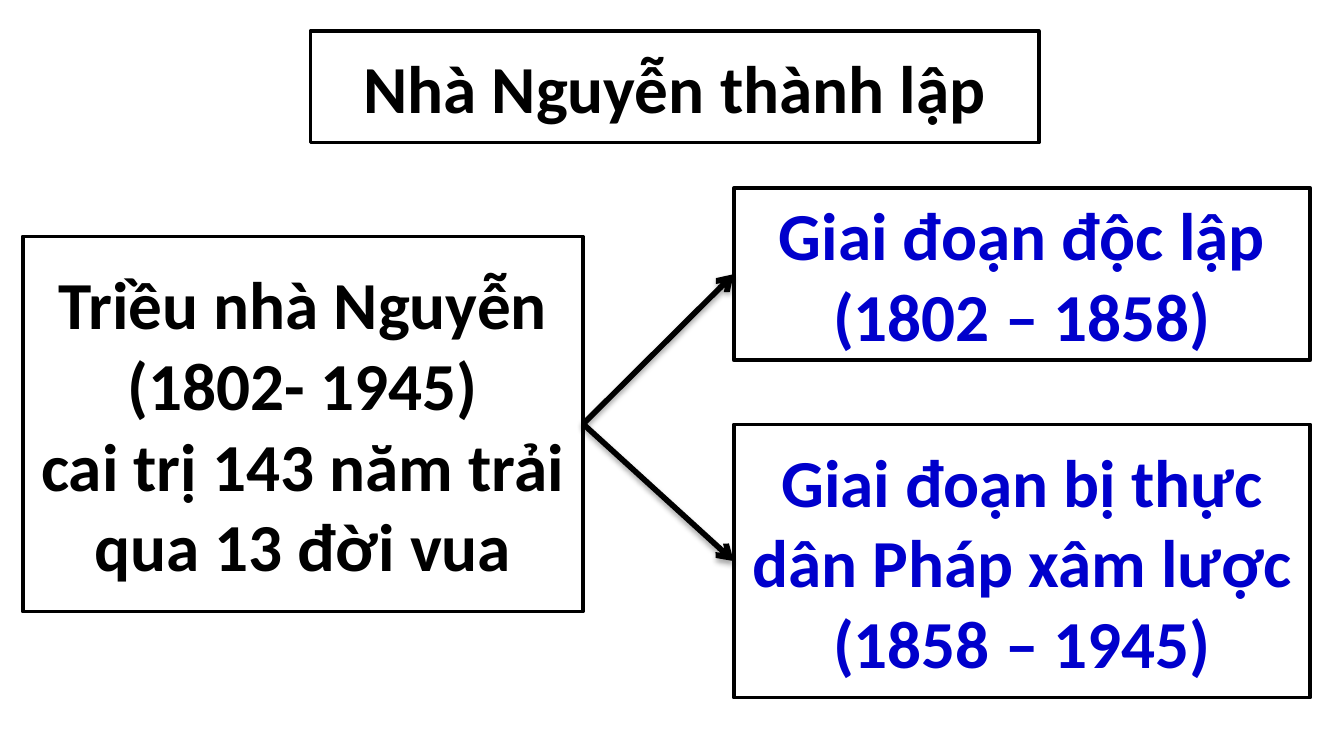
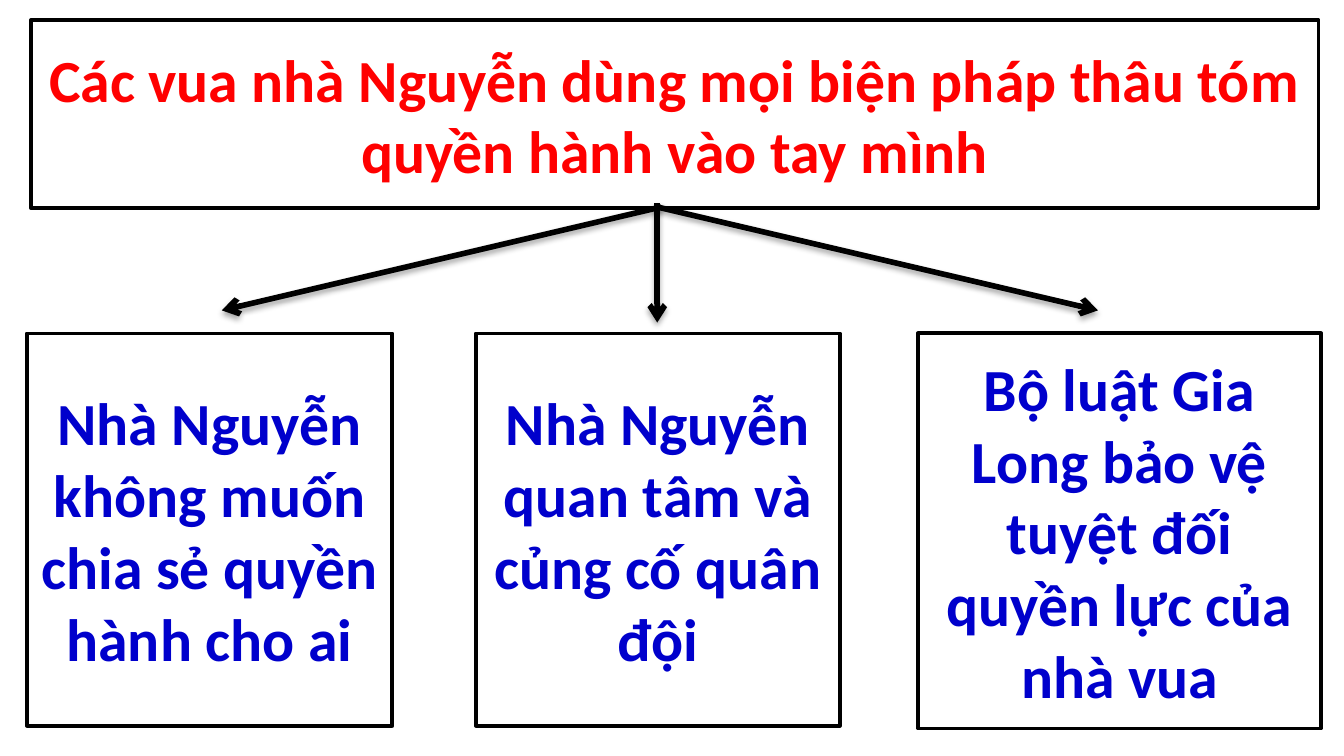
import pptx
import pptx.dml.color
import pptx.enum.shapes
import pptx.enum.text
import pptx.oxml
import pptx.oxml.ns
import pptx.util

Pt = pptx.util.Pt
COLORS = {"paper": "FFFFFF", "ink": "000000", "detail": "0000CC", "alert": "FF0000"}
FONT = "Calibri"
TITLE_ONLY = 5
TOP, LEFT, BOTTOM, RIGHT = range(4)
SHADOW = (
    f'<a:effectLst {pptx.oxml.ns.nsdecls("a")}>'
    '<a:outerShdw blurRad="39370" dist="22860" dir="5400000" rotWithShape="0">'
    f'<a:srgbClr val="{COLORS["ink"]}"><a:alpha val="35000"/></a:srgbClr>'
    "</a:outerShdw></a:effectLst>"
)
ARROWHEAD = f'<a:tailEnd {pptx.oxml.ns.nsdecls("a")} type="arrow"/>'


def rgb(name):
    return pptx.dml.color.RGBColor.from_string(COLORS[name])


def format_box(box, paragraphs, size, color):
    """Give a box its white fill, black frame and centred bold text."""
    box.fill.solid()
    box.fill.fore_color.rgb = rgb("paper")
    box.line.color.rgb = rgb("ink")
    box.line.width = Pt(2)

    frame = box.text_frame
    frame.word_wrap = True
    frame.auto_size = pptx.enum.text.MSO_AUTO_SIZE.NONE
    frame.vertical_anchor = pptx.enum.text.MSO_ANCHOR.MIDDLE
    for index, text in enumerate(paragraphs):
        paragraph = frame.add_paragraph() if index else frame.paragraphs[0]
        paragraph.alignment = pptx.enum.text.PP_ALIGN.CENTER
        run = paragraph.add_run()
        run.text = text
        run.font.name = FONT
        run.font.size = Pt(size)
        run.font.bold = True
        run.font.color.rgb = rgb(color)


def add_titled_slide(deck, text, bounds, size, color):
    slide = deck.slides.add_slide(deck.slide_layouts[TITLE_ONLY])
    title = slide.shapes.title
    title.left, title.top, title.width, title.height = map(Pt, bounds)
    format_box(title, [text], size, color)
    return slide


def add_box(slide, paragraphs, bounds, size, color):
    box = slide.shapes.add_shape(
        pptx.enum.shapes.MSO_SHAPE.RECTANGLE, *map(Pt, bounds)
    )
    box.shadow.inherit = False
    format_box(box, paragraphs, size, color)
    return box


def add_arrow(slide, start=(0, 0), end=(0, 0)):
    arrow = slide.shapes.add_connector(
        pptx.enum.shapes.MSO_CONNECTOR.STRAIGHT, *map(Pt, start + end)
    )
    arrow.line.color.rgb = rgb("ink")
    arrow.line.width = Pt(3)
    properties = arrow.element.spPr
    outline = properties.find(pptx.oxml.ns.qn("a:ln"))
    outline.append(pptx.oxml.parse_xml(ARROWHEAD))
    properties.append(pptx.oxml.parse_xml(SHADOW))
    return arrow


def build_founding(deck):
    slide = add_titled_slide(
        deck, "Nhà Nguyễn thành lập", (166.3, 16.6, 390.2, 59.8), 36, "ink"
    )
    dynasty = add_box(
        slide,
        ["Triều nhà Nguyễn (1802- 1945)", "cai trị 143 năm trải qua 13 đời vua"],
        (12.2, 126.7, 300.2, 200.9), 36, "ink",
    )
    periods = [
        (["Giai đoạn độc lập", "(1802 – 1858)"], 100.8, 92.2),
        (["Giai đoạn bị thực dân Pháp xâm lược", "(1858 – 1945)"], 227.5, 146.2),
    ]
    for paragraphs, top, height in periods:
        period = add_box(slide, paragraphs, (393.1, top, 308.9, height), 36, "detail")
        arrow = add_arrow(slide)
        arrow.begin_connect(dynasty, RIGHT)
        arrow.end_connect(period, LEFT)


def build_power(deck):
    slide = add_titled_slide(
        deck,
        "Các vua nhà Nguyễn dùng mọi biện pháp thâu tóm quyền hành vào tay mình",
        (16.6, 10.8, 689.8, 100.8), 32, "alert",
    )
    measures = [
        ("Nhà Nguyễn không muốn chia sẻ quyền hành cho ai", 14.4, 195.8, 210.2),
        ("Nhà Nguyễn quan tâm và củng cố quân đội", 254.9, 195.1, 210.2),
        ("Bộ luật Gia Long bảo vệ tuyệt đối quyền lực của nhà vua", 491.8, 216, 211.7),
    ]
    for text, left, width, height in measures:
        add_box(slide, [text], (left, 178.6, width, height), 32, "detail")

    arrow_ends = [
        ((354.2, 110.9), (118.8, 166.3)),
        ((352.1, 109), (352.1, 172.8)),
        ((352.1, 110.9), (588.2, 166.3)),
    ]
    for start, end in arrow_ends:
        add_arrow(slide, start, end)


def main():
    deck = pptx.Presentation()
    deck.slide_width, deck.slide_height = Pt(720), Pt(405)
    build_founding(deck)
    build_power(deck)
    deck.save("out.pptx")


if __name__ == "__main__":
    main()
